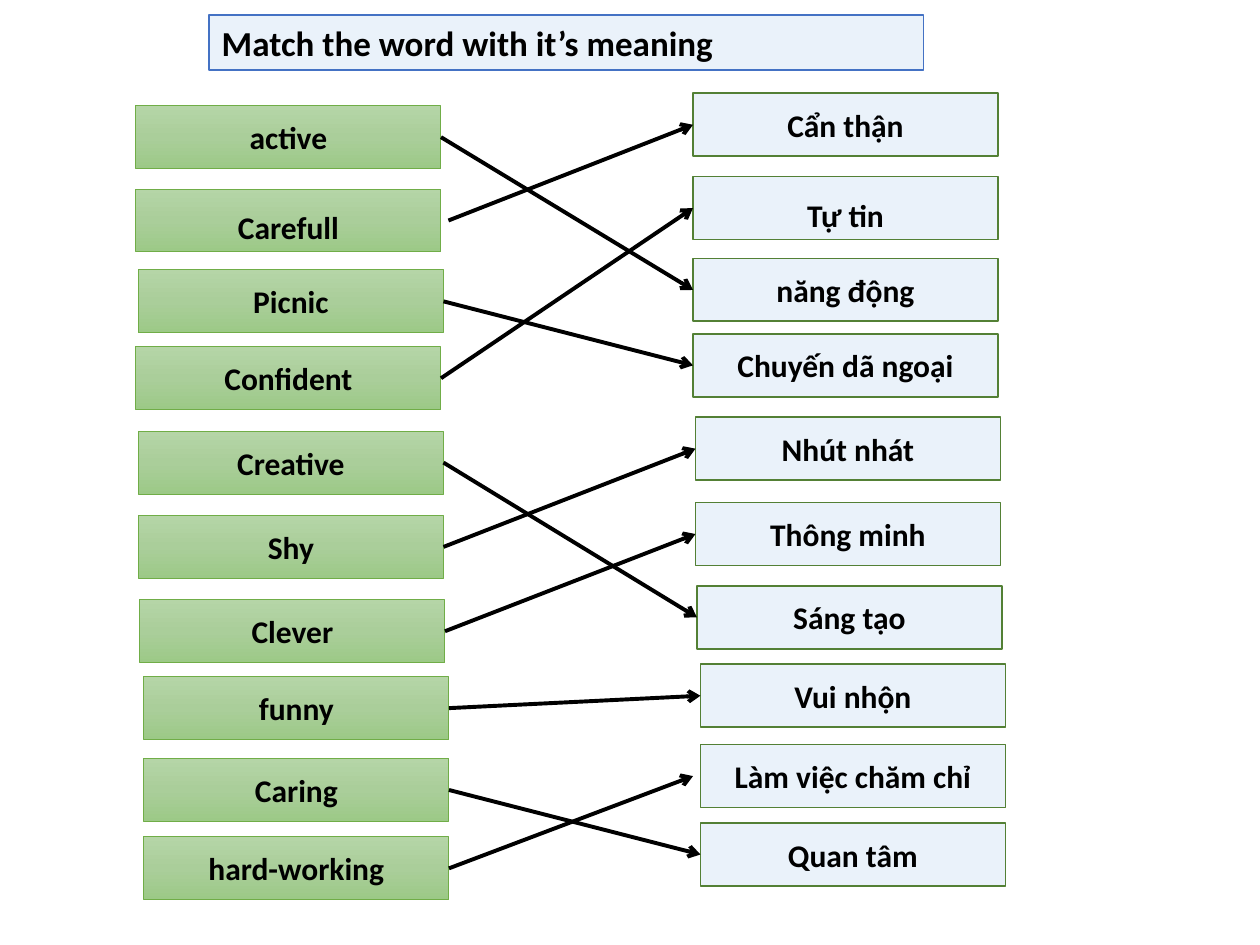
"""Build a word-matching exercise slide with arrows joining words to meanings."""
from copy import deepcopy
from dataclasses import dataclass

from lxml.etree import SubElement
from pptx import Presentation
from pptx.dml.color import RGBColor
from pptx.enum.shapes import MSO_CONNECTOR as Connector, MSO_SHAPE as Shape
from pptx.enum.text import MSO_ANCHOR as Anchor, PP_ALIGN as Align
from pptx.oxml.ns import qn
from pptx.util import Cm, Pt

COLORS = {
    "text": "000000",
    "pale": "EAF2FA",
    "title_line": "4472C4",
    "word_line": "70AD47",
    "meaning_line": "538035",
    "green_top": "B5D5A7",
    "green_middle": "AACE9A",
    "green_bottom": "9CC987",
}
BOX_WIDTH, BOX_HEIGHT = 6.15, 1.27
RIGHT_SITE, LEFT_SITE = 3, 1


@dataclass(frozen=True)
class Box:
    text: str
    left: float
    top: float
    anchor: Anchor = Anchor.MIDDLE


@dataclass(frozen=True)
class Match:
    word: int
    meaning: int
    start_gap: float = 0
    end_gap: float = 0


WORDS = [
    Box("active", 2.74, 2.13),
    Box("Carefull", 2.74, 3.81, Anchor.BOTTOM),
    Box("Picnic", 2.79, 5.44),
    Box("Confident", 2.74, 6.99),
    Box("Creative", 2.79, 8.69),
    Box("Shy", 2.79, 10.39),
    Box("Clever", 2.82, 12.09),
    Box("funny", 2.9, 13.64),
    Box("Caring", 2.9, 15.29),
    Box("hard-working", 2.9, 16.87),
]
MEANINGS = [
    Box("Cẩn thận", 13.97, 1.88),
    Box("Tự tin", 13.97, 3.56, Anchor.BOTTOM),
    Box("năng động", 13.97, 5.21),
    Box("Chuyến dã ngoại", 13.97, 6.73),
    Box("Nhút nhát", 14.02, 8.41),
    Box("Thông minh", 14.02, 10.13),
    Box("Sáng tạo", 14.05, 11.81),
    Box("Vui nhộn", 14.12, 13.39),
    Box("Làm việc chăm chỉ", 14.12, 15.01),
    Box("Quan tâm", 14.12, 16.59),
]
MATCHES = [
    Match(0, 2),
    Match(1, 0, start_gap=0.15),
    Match(2, 3),
    Match(3, 1),
    Match(4, 6),
    Match(5, 4),
    Match(6, 5),
    Match(7, 7),
    Match(8, 9),
    Match(9, 8, end_gap=0.15),
]


def rgb(name: str) -> RGBColor:
    """Return the named colour."""
    return RGBColor.from_string(COLORS[name])


def write_text(shape, text: str, *, size=18, align=Align.CENTER, anchor=Anchor.MIDDLE) -> None:
    """Write one bold paragraph into a shape."""
    frame = shape.text_frame
    frame.word_wrap = True
    frame.vertical_anchor = anchor
    paragraph = frame.paragraphs[0]
    paragraph.alignment = align
    run = paragraph.add_run()
    run.text = text
    run.font.name = "Calibri"
    run.font.size = Pt(size)
    run.font.bold = True
    run.font.color.rgb = rgb("text")


def fill_green(shape) -> None:
    """Give a shape the three-stop vertical green gradient."""
    shape.fill.gradient()
    shape.fill.gradient_angle = 270
    first = shape._element.spPr.find(".//" + qn("a:gs"))
    middle = deepcopy(first)
    middle.set("pos", "50000")
    first.addnext(middle)
    names = ("green_top", "green_middle", "green_bottom")
    for stop, name in zip(shape.fill.gradient_stops, names):
        stop.color.rgb = rgb(name)


def add_box(slide, box: Box, line: str, *, width=BOX_WIDTH, height=BOX_HEIGHT,
            line_width=1.0, green=False, **text_format):
    """Draw a labelled rectangle and return it."""
    shape = slide.shapes.add_shape(
        Shape.RECTANGLE, Cm(box.left), Cm(box.top), Cm(width), Cm(height))
    shape.shadow.inherit = False
    if green:
        fill_green(shape)
    else:
        shape.fill.solid()
        shape.fill.fore_color.rgb = rgb("pale")
    shape.line.color.rgb = rgb(line)
    shape.line.width = Pt(line_width)
    write_text(shape, box.text, anchor=box.anchor, **text_format)
    return shape


def add_arrow(slide, match: Match, word, meaning) -> None:
    """Draw an arrow from a word to its meaning, glued where there is no gap."""
    connector = slide.shapes.add_connector(
        Connector.STRAIGHT,
        word.left + word.width + Cm(match.start_gap), word.top + word.height // 2,
        meaning.left - Cm(match.end_gap), meaning.top + meaning.height // 2)
    if not match.start_gap:
        connector.begin_connect(word, RIGHT_SITE)
    if not match.end_gap:
        connector.end_connect(meaning, LEFT_SITE)
    connector.line.color.rgb = rgb("text")
    connector.line.width = Pt(2.25)
    SubElement(connector.line._get_or_add_ln(), qn("a:tailEnd"), type="arrow")
    SubElement(connector._element.spPr, qn("a:effectLst"))


def main() -> None:
    """Build and save the presentation."""
    presentation = Presentation()
    presentation.slide_width, presentation.slide_height = Cm(25.4), Cm(19.05)
    slide = presentation.slides.add_slide(presentation.slide_layouts[6])
    title = Box("Match the word with it’s meaning", 4.22, 0.3, Anchor.TOP)
    add_box(slide, title, "title_line", width=14.4, height=1.12, size=20, align=Align.LEFT)
    words = [add_box(slide, box, "word_line", line_width=0.5, green=True) for box in WORDS]
    meanings = [add_box(slide, box, "meaning_line") for box in MEANINGS]
    for match in MATCHES:
        add_arrow(slide, match, words[match.word], meanings[match.meaning])
    presentation.save("out.pptx")


if __name__ == "__main__":
    main()
